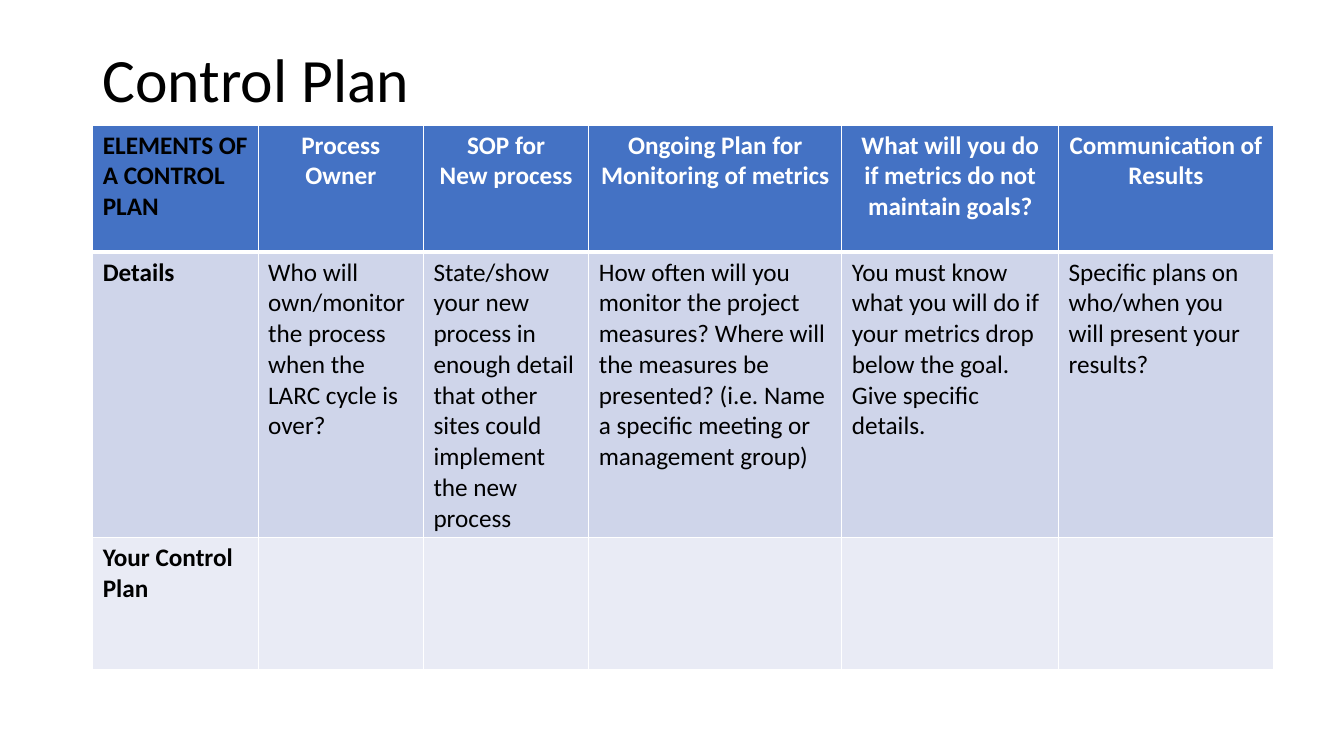
from dataclasses import dataclass
from lxml.etree import SubElement
from pptx import Presentation
from pptx.dml.color import RGBColor
from pptx.enum.text import MSO_ANCHOR, PP_ALIGN
from pptx.oxml.ns import qn
from pptx.util import Inches, Pt


@dataclass(frozen=True)
class Theme:
    font: str = "Calibri"
    title: int = 44
    body: int = 18
    ink: str = "000000"
    white: str = "FFFFFF"
    fills: tuple = ("4472C4", "CFD5EA", "E9EBF5")


HEADS = [
    "ELEMENTS OF A CONTROL PLAN",
    "Process Owner",
    "SOP for\nNew process",
    "Ongoing Plan for Monitoring of metrics",
    "What will you do if metrics do not maintain goals?",
    "Communication of Results",
]
DETAILS = [
    "Details",
    "Who will own/monitor the process when the LARC cycle is over?",
    "State/show your new process in enough detail that other sites "
    "could implement the new process",
    "How often will you monitor the project measures? Where will the measures "
    "be presented? (i.e. Name a specific meeting or management group)",
    "You must know what you will do if your metrics drop below the goal. "
    "Give specific details.",
    "Specific plans on who/when you will present your results?",
]
PLAN = ["Your Control Plan"] + [""] * 5
WIDTHS = [1.64, 1.64, 1.64, 2.51, 2.15, 2.13]
HEIGHTS = [1.26, 2.83, 1.31]


class Page:
    def __init__(self, deck, theme):
        self.theme = theme
        self.slide = deck.slides.add_slide(deck.slide_layouts[6])

    def style(self, para, size, color, bold=False):
        font = para.font
        font.name = self.theme.font
        font.size = Pt(size)
        font.bold = bold
        font.color.rgb = RGBColor.from_string(color)

    def title(self, text, left, top, width, height):
        box = self.slide.shapes.add_textbox(
            Inches(left), Inches(top), Inches(width), Inches(height))
        frame = box.text_frame
        frame.word_wrap = True
        frame.vertical_anchor = MSO_ANCHOR.MIDDLE
        frame.text = text
        para = frame.paragraphs[0]
        para.line_spacing = 0.9
        self.style(para, self.theme.title, self.theme.ink)

    def border(self, cell, sides):
        props = cell._tc.get_or_add_tcPr()
        for side, width in sides.items():
            line = SubElement(props, qn(f"a:ln{side}"), w=str(Pt(width)))
            fill = SubElement(line, qn("a:solidFill"))
            SubElement(fill, qn("a:srgbClr"), val=self.theme.white)

    def cell(self, cell, text, row, col):
        head, label = row == 0, col == 0
        base = 3 if head else 1
        roof = 3 if row == 1 else 1
        self.border(cell, {"L": 1, "R": 1, "T": roof, "B": base})
        cell.fill.solid()
        cell.fill.fore_color.rgb = RGBColor.from_string(self.theme.fills[row])
        cell.text = text
        white = head and not label
        color = self.theme.white if white else self.theme.ink
        for para in cell.text_frame.paragraphs:
            para.alignment = PP_ALIGN.CENTER if white else PP_ALIGN.LEFT
            self.style(para, self.theme.body, color, head or label)

    def table(self, rows, left, top, widths, heights):
        frame = self.slide.shapes.add_table(
            len(rows), len(widths), Inches(left), Inches(top),
            Inches(sum(widths)), Inches(sum(heights)))
        table = frame.table
        table.first_row = False
        table.horz_banding = False
        for col, width in zip(table.columns, widths):
            col.width = Inches(width)
        for line, height in zip(table.rows, heights):
            line.height = Inches(height)
        for row, texts in enumerate(rows):
            for col, text in enumerate(texts):
                self.cell(table.cell(row, col), text, row, col)


def main():
    deck = Presentation()
    deck.slide_width = Inches(13.33)
    deck.slide_height = Inches(7.5)
    page = Page(deck, Theme())
    page.title("Control Plan", 0.92, 0.4, 11.5, 0.84)
    page.table([HEADS, DETAILS, PLAN], 0.92, 1.24, WIDTHS, HEIGHTS)
    deck.save("out.pptx")


if __name__ == "__main__":
    main()
